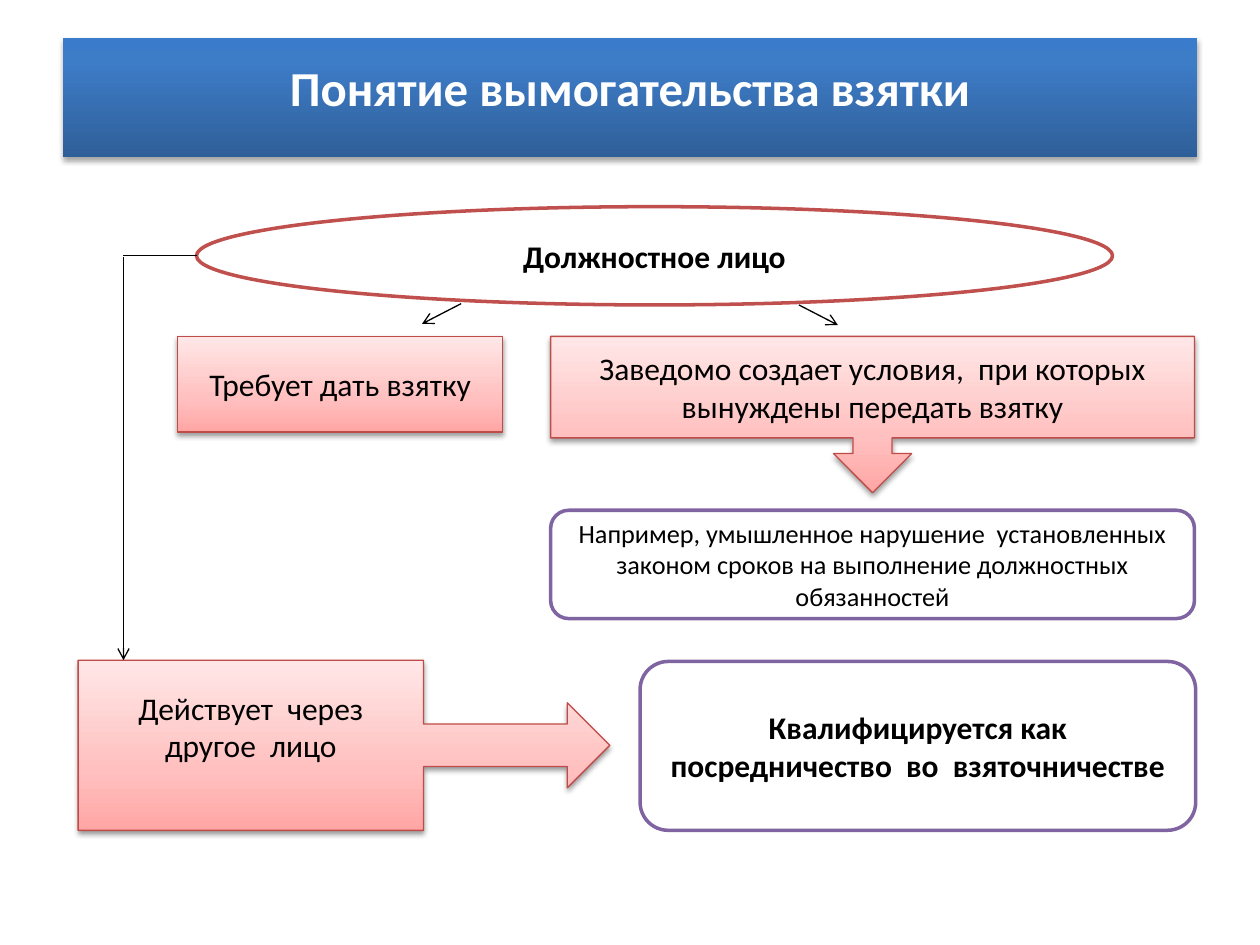
from dataclasses import dataclass
from typing import Optional

import pptx
import pptx.dml.color
import pptx.enum.shapes
import pptx.enum.text
import pptx.oxml
import pptx.oxml.ns
import pptx.util
from pptx.util import Inches

SHAPE = pptx.enum.shapes.MSO_SHAPE
qn = pptx.oxml.ns.qn

BLUE = ((0, "2F5F99"), (80, "3D7CC7"), (100, "3A7CCB"))
PINK = ((0, "FFA6A5"), (35, "FFC0BF"), (100, "FFE7E7"))
WHITE, BLACK = "FFFFFF", "000000"
RED, DARK_RED, PURPLE = "C0504D", "BF4C48", "8064A2"


@dataclass
class Box:
    kind: int
    left: float
    top: float
    width: float
    height: float
    lines: tuple
    line: Optional[str]
    line_width: float = 2
    gradient: Optional[tuple] = None
    shadow_alpha: int = 38
    size: float = 18
    bold: bool = False
    color: str = BLACK
    bottom_inset: float = 0.05


@dataclass
class Line:
    x1: float
    y1: float
    x2: float
    y2: float
    arrow: bool = True


BOXES = [
    # Title band
    Box(SHAPE.RECTANGLE, 0.5, 0.3, 9, 0.95, ("Понятие вымогательства взятки",), None,
        gradient=BLUE, shadow_alpha=35, size=27.9, bold=True, color=WHITE,
        bottom_inset=0.22),
    # The official and the forms of extortion
    Box(SHAPE.OVAL, 1.56, 1.64, 7.27, 0.78, ("Должностное лицо",), RED, bold=True),
    Box(SHAPE.RECTANGLE, 1.41, 2.67, 2.58, 0.76, ("Требует дать взятку",),
        DARK_RED, 0.75, PINK),
    Box(SHAPE.DOWN_ARROW_CALLOUT, 4.37, 2.67, 5.11, 1.24,
        ("Заведомо создает условия,  при которых вынуждены передать взятку",),
        DARK_RED, 0.75, PINK),
    Box(SHAPE.ROUNDED_RECTANGLE, 4.37, 4.05, 5.11, 0.86,
        ("Например, умышленное нарушение  установленных законом сроков "
         "на выполнение должностных обязанностей",), PURPLE, size=15),
    # Acting through another person
    Box(SHAPE.RIGHT_ARROW_CALLOUT, 0.62, 5.24, 4.22, 1.35,
        ("Действует  через", "другое  лицо"), DARK_RED, 0.75, PINK, bottom_inset=0.35),
    Box(SHAPE.ROUNDED_RECTANGLE, 5.08, 5.25, 4.41, 1.34,
        ("Квалифицируется как посредничество  во  взяточничестве",), PURPLE, bold=True),
]

LINES = [
    Line(1.56, 2.03, 0.98, 2.03, arrow=False),
    Line(0.98, 2.04, 0.98, 5.24),
    Line(3.66, 2.41, 3.35, 2.57),
    Line(6.34, 2.42, 6.65, 2.58),
]


def rgb(color: str) -> pptx.dml.color.RGBColor:
    return pptx.dml.color.RGBColor.from_string(color)


def add_xml(parent, tag: str, **attributes):
    child = parent.makeelement(qn(tag), attributes)
    parent.append(child)
    return child


def set_gradient(sp, stops: tuple) -> None:
    sp.fill.gradient()
    sp.fill.gradient_angle = 90
    gs_list = next(sp._element.spPr.iter(qn("a:gsLst")))
    for old in list(gs_list):
        gs_list.remove(old)
    for position, color in stops:
        stop = add_xml(gs_list, "a:gs", pos=str(position * 1000))
        add_xml(stop, "a:srgbClr", val=color)


def add_shadow(sp, alpha: int) -> None:
    effects = sp._element.spPr.find(qn("a:effectLst"))
    shadow = add_xml(effects, "a:outerShdw", blurRad=str(pptx.util.Pt(3.1)),
                     dist=str(pptx.util.Pt(1.7)), dir="5400000", rotWithShape="0")
    color = add_xml(shadow, "a:srgbClr", val=BLACK)
    add_xml(color, "a:alpha", val=str(alpha * 1000))


def add_text(sp, box: Box) -> None:
    tf = sp.text_frame
    frame_format = {
        "word_wrap": True,
        "vertical_anchor": pptx.enum.text.MSO_ANCHOR.MIDDLE,
        "margin_bottom": Inches(box.bottom_inset),
    }
    for name, value in frame_format.items():
        setattr(tf, name, value)
    font_format = {"name": "Calibri", "size": pptx.util.Pt(box.size), "bold": box.bold}
    for i, text in enumerate(box.lines):
        p = tf.add_paragraph() if i else tf.paragraphs[0]
        p.alignment = pptx.enum.text.PP_ALIGN.CENTER
        r = p.add_run()
        r.text = text
        for name, value in font_format.items():
            setattr(r.font, name, value)
        r.font.color.rgb = rgb(box.color)


def add_box(s, box: Box) -> None:
    sp = s.shapes.add_shape(box.kind, Inches(box.left), Inches(box.top),
                            Inches(box.width), Inches(box.height))
    sp.shadow.inherit = False
    if box.gradient:
        set_gradient(sp, box.gradient)
        add_shadow(sp, box.shadow_alpha)
    else:
        sp.fill.solid()
        sp.fill.fore_color.rgb = rgb(WHITE)
    if box.line:
        sp.line.color.rgb = rgb(box.line)
        sp.line.width = pptx.util.Pt(box.line_width)
    else:
        sp.line.fill.background()
    add_text(sp, box)


def add_line(s, line: Line) -> None:
    cx = s.shapes.add_connector(pptx.enum.shapes.MSO_CONNECTOR.STRAIGHT,
                                Inches(line.x1), Inches(line.y1),
                                Inches(line.x2), Inches(line.y2))
    cx.line.color.rgb = rgb(BLACK)
    cx.line.width = pptx.util.Pt(0.75)
    if line.arrow:
        add_xml(cx.line._get_or_add_ln(), "a:tailEnd", type="arrow")
    add_xml(cx._element.spPr, "a:effectLst")


def main() -> None:
    prs = pptx.Presentation()
    prs.slide_width, prs.slide_height = Inches(10), Inches(7.5)
    s = prs.slides.add_slide(prs.slide_layouts[6])
    for box in BOXES:
        add_box(s, box)
    for line in LINES:
        add_line(s, line)
    prs.save("out.pptx")


if __name__ == "__main__":
    main()
